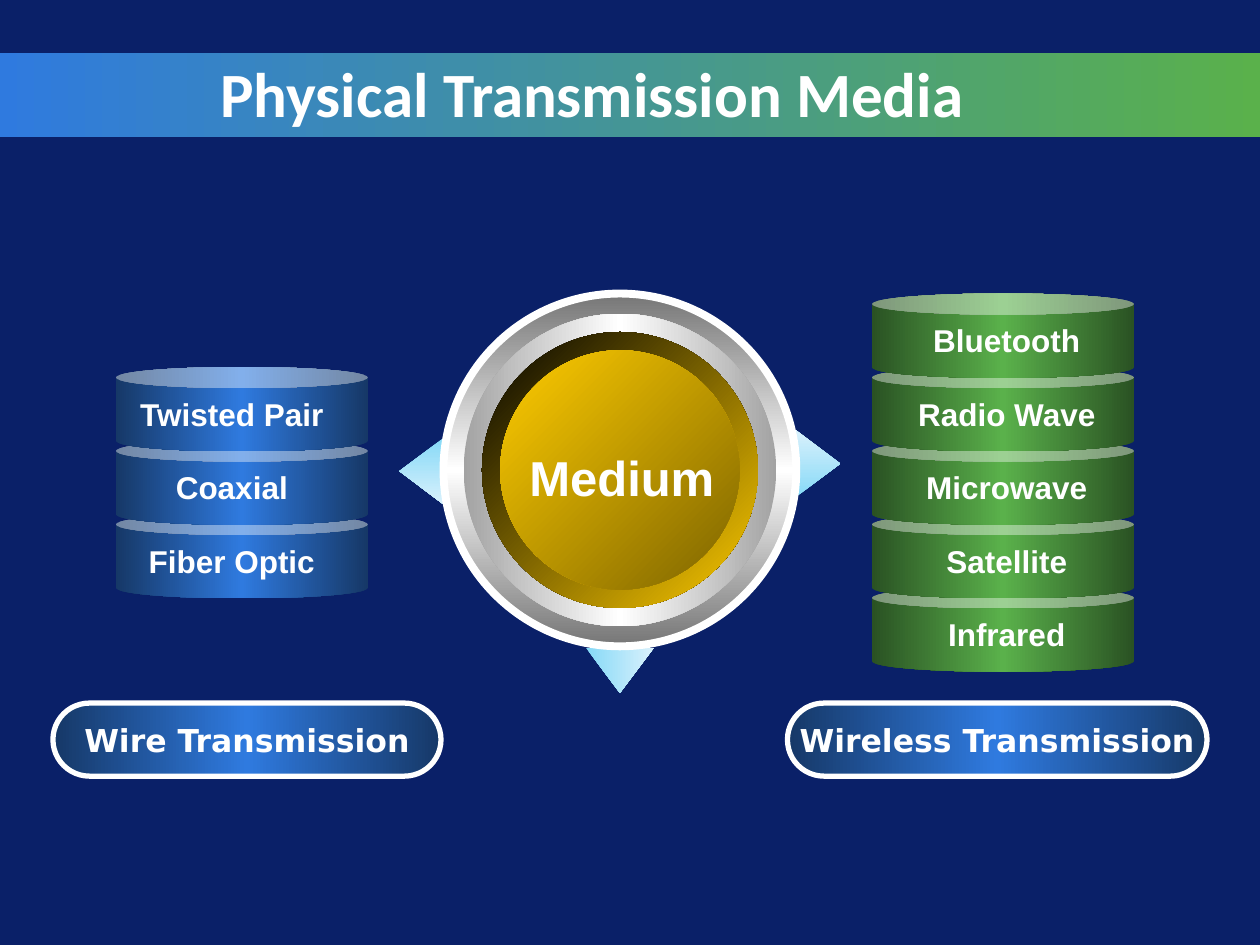
import pptx
import pptx.util
import pptx.dml.color
import pptx.enum.shapes
import pptx.enum.text
import pptx.oxml.ns
from lxml import etree

Inch = pptx.util.Inches
Pt = pptx.util.Pt
Kind = pptx.enum.shapes.MSO_SHAPE
Align = pptx.enum.text.PP_ALIGN
Anchor = pptx.enum.text.MSO_ANCHOR
qn = pptx.oxml.ns.qn

HUE = {
    "back": "0A2068", "white": "FFFFFF", "black": "000000",
    "blue": "2F7ADF", "navy": "163867", "green": "5AB14B", "moss": "2A5223",
    "sky": "85D9F7", "ice": "DAF1FC", "gray": "767676", "silver": "A3A3A3",
    "gold": "FFCC00", "bronze": "7D6400",
}

TITLE = "Physical Transmission Media"
HUB = "Medium"

# Each stack: left, width, label centre, first row, colours, (label, label width)
STACKS = [
    (0.92, 2.0, 1.84, 1, ("navy", "blue", "navy"),
     [("Twisted Pair", 1.67), ("Coaxial", 1.1), ("Fiber Optic", 1.53)]),
    (6.92, 2.08, 7.99, 0, ("moss", "green", "moss"),
     [("Bluetooth", 1.38), ("Radio Wave", 1.62), ("Microwave", 1.49),
      ("Satellite", 1.17), ("Infrared", 1.14)]),
]
TOP, STEP, TALL = 2.33, 0.583, 0.67

# Each pill: label, left, width
PILLS = [("Wire Transmission", 0.42, 3.08), ("Wireless Transmission", 6.25, 3.33)]

# Each ring: diameter, colours, gradient angle, outline width
MID = (4.92, 3.73)
RINGS = [
    (2.8, ("gray", "white", "gray"), 90, 4.5),
    (2.48, ("silver", "white", "silver"), 0, 0),
    (2.19, ("black", "gold"), 45, 0),
    (1.9, ("gold", "bronze"), 45, 0),
]

# Each pointer: left, top, rotation
POINTERS = [(3.08, 3.56, 270), (6.22, 3.5, 90), (4.65, 5.14, 180)]


def color(name):
    return pptx.dml.color.RGBColor.from_string(HUE[name])


def blend(shape, names, angle):
    """Fill with evenly spaced colours; the angle runs clockwise."""
    shape.fill.gradient()
    shape.fill.gradient_angle = -angle % 360
    stops = shape._element.spPr.find(qn("a:gradFill")).find(qn("a:gsLst"))
    for old in list(stops):
        stops.remove(old)
    for i, name in enumerate(names):
        pos = str(100000 * i // (len(names) - 1))
        stop = etree.SubElement(stops, qn("a:gs"), pos=pos)
        etree.SubElement(stop, qn("a:srgbClr"), val=HUE[name])


def draw(kind, box, names, angle=0, line=0, adjust=()):
    shape = slide.shapes.add_shape(kind, *map(Inch, box))
    shape.shadow.inherit = False
    for i, value in enumerate(adjust):
        shape.adjustments[i] = value
    blend(shape, names, angle)
    if line:
        shape.line.color.rgb = color("white")
        shape.line.width = Pt(line)
    else:
        shape.line.fill.background()
    return shape


def write(shape, text, size, font="Arial", align=Align.CENTER):
    para = shape.text_frame.paragraphs[0]
    para.text = text
    para.alignment = align
    para.font.name = font
    para.font.size = Pt(size)
    para.font.bold = True
    para.font.color.rgb = color("white")


def label(text, box, size):
    shape = slide.shapes.add_textbox(*map(Inch, box))
    shape.text_frame.word_wrap = False
    write(shape, text, size)


deck = pptx.Presentation()
deck.slide_width, deck.slide_height = Inch(10), Inch(7.5)
slide = deck.slides.add_slide(deck.slide_layouts[5])
slide.background.fill.solid()
slide.background.fill.fore_color.rgb = color("back")

band = draw(Kind.RECTANGLE, (0, 0.42, 10, 0.67), ("blue", "green"))
slide.shapes._spTree.insert(2, band._element)  # behind the title

title = slide.shapes.title
title.left, title.top, title.width, title.height = map(Inch, (0.5, 0.42, 7.25, 0.62))
title.text_frame.vertical_anchor = Anchor.MIDDLE
write(title, TITLE, 36, "Calibri", Align.RIGHT)

for left, top, turn in POINTERS:
    arrow = draw(Kind.UP_ARROW, (left, top, 0.54, 0.36), ("sky", "ice"),
                 adjust=(0.517, 1))
    arrow.rotation = turn
    arrow._element.spPr.find(qn("a:xfrm")).set("flipH", "1")

for size, names, angle, line in RINGS:
    draw(Kind.OVAL, (MID[0] - size / 2, MID[1] - size / 2, size, size),
         names, angle, line)
label(HUB, (4.09, 3.5, 1.69, 0.57), 28)

for left, width, mid, first, names, items in STACKS:
    rows = [TOP + STEP * (first + i) for i in range(len(items))]
    for top in reversed(rows):  # upper cans overlap lower ones
        draw(Kind.CAN, (left, top, width, TALL), names, adjust=(0.25,))
    for top, (text, wide) in zip(rows, items):
        label(text, (mid - wide / 2, top + 0.17, wide, 0.4), 18)

for text, left, width in PILLS:
    pill = draw(Kind.ROUNDED_RECTANGLE, (left, 5.58, width, 0.58),
                ("navy", "blue", "navy"), line=3, adjust=(0.5,))
    pill.text_frame.word_wrap = False
    pill.text_frame.vertical_anchor = Anchor.MIDDLE
    write(pill, text, 18, "DejaVu Sans")

deck.save("out.pptx")
